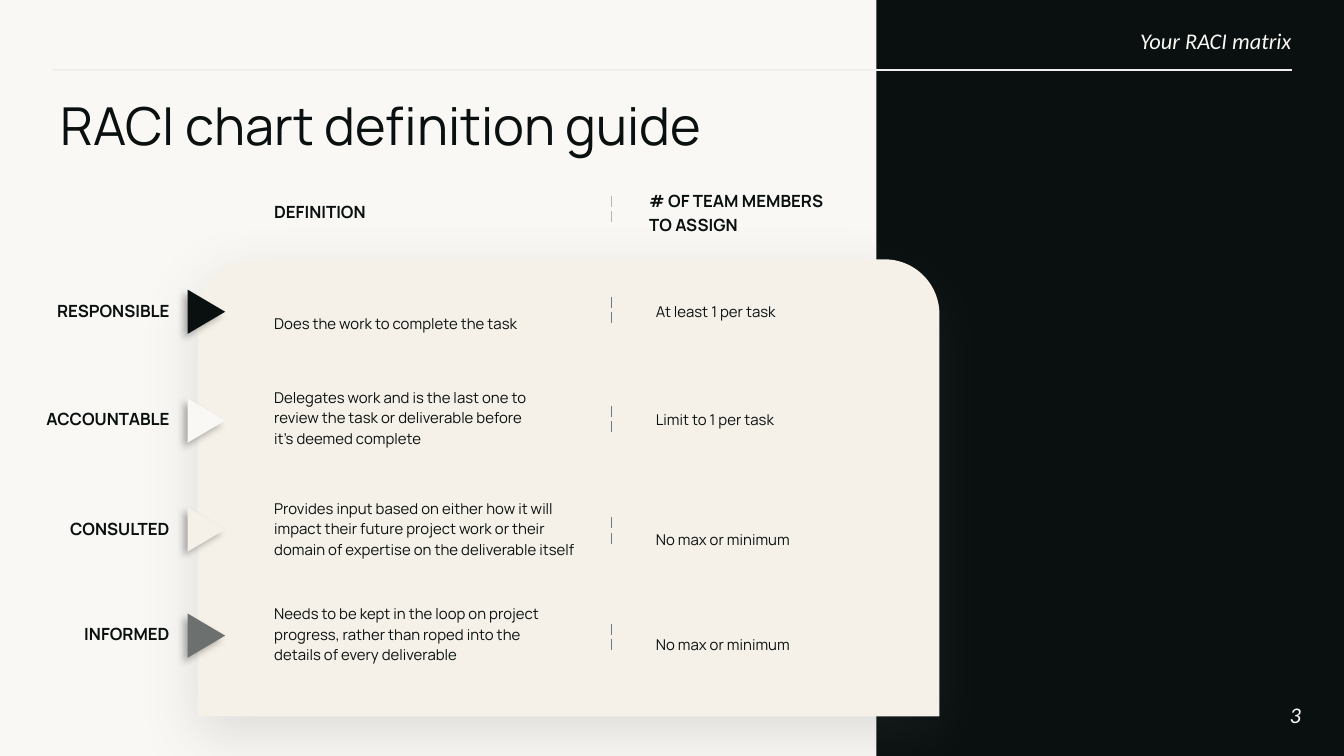
from lxml.etree import SubElement as Sub
from pptx import Presentation
from pptx.dml.color import RGBColor
from pptx.enum.dml import MSO_LINE as Dash
from pptx.enum.shapes import MSO_CONNECTOR as Link, MSO_SHAPE as Form
from pptx.enum.text import MSO_ANCHOR as Anchor, MSO_AUTO_SIZE as Auto, PP_ALIGN as Align
from pptx.oxml.ns import qn
from pptx.util import Inches, Pt

INK = RGBColor(0x09, 0x10, 0x0F)
PAPER = RGBColor(0xF9, 0xF8, 0xF5)
CREAM = RGBColor(0xF5, 0xF1, 0xE8)
GREY = RGBColor(0x6C, 0x70, 0x6F)
RULE = RGBColor(0xEF, 0xEF, 0xEF)
SLATE = RGBColor(0x67, 0x7E, 0x87)
SILVER = RGBColor(0xB5, 0xB7, 0xB7)

TITLE = {"name": "Manrope", "size": Pt(28)}
HEAD = {"name": "Manrope", "size": Pt(9), "bold": True}
BODY = {"name": "Manrope", "size": Pt(8)}
NOTE = {"name": "Calibri", "size": Pt(12), "italic": True}
PAD = {"margin_left": 0.07, "margin_right": 0.07, "margin_top": 0.04, "margin_bottom": 0.04}

SOFT = ("595959", 17, 30, 10, 90)
HARD = ("000000", 30, 4, 3, 135)

ROWS = [
    {"top": 0.28, "label": ("RESPONSIBLE", 0.27, 1.09), "mark": (0.25, INK),
     "role": ("Does the work to complete the task", 0.28, 2, 0.37),
     "count": ("At least 1 per task", 0.28, 0.21, None)},
    {"top": 1.09, "label": ("ACCOUNTABLE", 1.07, 1.22), "mark": (1.06, PAPER),
     "role": ("Delegates work and is the last one to review the task or deliverable "
              "before it’s deemed complete", 0.91, 2.13, 0.52),
     "count": ("Limit to 1 per task", 1.09, 0.21, None)},
    {"top": 1.92, "label": ("CONSULTED", 1.89, 1), "mark": (1.87, CREAM),
     "role": ("Provides input based on either how it will impact their future project work "
              "or their domain of expertise on the deliverable itself", 1.66, 2.47, 0.67),
     "count": ("No max or minimum", 1.83, 0.43, 1.6)},
    {"top": 2.71, "label": ("INFORMED", 2.67, 0.89), "mark": (2.66, GREY),
     "role": ("Needs to be kept in the loop on project progress, rather than roped into "
              "the details of every deliverable", 2.52, 2.19, 0.52),
     "count": ("No max or minimum", 2.61, 0.43, 1.6)},
]


def add_text(slide, box, text, style, color=INK, align=Align.LEFT,
             anchor=Anchor.TOP, space=None, pad=True):
    frame = slide.shapes.add_textbox(*map(Inches, box)).text_frame
    for key, gap in PAD.items():
        setattr(frame, key, Inches(gap if pad else 0))
    frame.word_wrap = True
    frame.auto_size = Auto.SHAPE_TO_FIT_TEXT if pad else Auto.NONE
    frame.vertical_anchor = anchor
    para = frame.paragraphs[0]
    para.alignment = align
    if space:
        para.line_spacing = space
    run = para.add_run()
    run.text = text
    for key, val in style.items():
        setattr(run.font, key, val)
    run.font.color.rgb = color


def add_form(slide, kind, box, color, shade=None):
    form = slide.shapes.add_shape(kind, *map(Inches, box))
    form.fill.solid()
    form.fill.fore_color.rgb = color
    form.line.fill.background()
    form.shadow.inherit = False
    if shade:
        tint, alpha, blur, dist, turn = shade
        effect = form._element.spPr.find(qn("a:effectLst"))
        outer = Sub(effect, qn("a:outerShdw"), blurRad=str(Pt(blur)), dist=str(Pt(dist)),
                    dir=str(turn * 60000), algn="ctr", rotWithShape="0")
        hue = Sub(outer, qn("a:srgbClr"), val=tint)
        Sub(hue, qn("a:alpha"), val=str(alpha * 1000))
    return form


def add_line(slide, ends, color, dash=None):
    line = slide.shapes.add_connector(Link.STRAIGHT, *map(Inches, ends))
    line.line.color.rgb = color
    line.line.width = Pt(0.75)
    if dash:
        line.line.dash_style = dash
    Sub(line._element.spPr, qn("a:effectLst"))


def add_tick(slide, x, y, color):
    add_line(slide, (x, y, x, y + 0.21), color, Dash.LONG_DASH)


def draw_frame(slide, box):
    x, y, w, h = box
    add_form(slide, Form.RECTANGLE, (x + 6.52, y - 0.02, 3.49, h + 0.05), INK)
    add_line(slide, (x + w - 0.39, y + 0.52, x + 0.39, y + 0.52), RULE)
    add_text(slide, (x + 5.76, y + 0.2, 3.85, 0.18), "Your RACI matrix", NOTE,
             PAPER, Align.RIGHT, pad=False)
    add_text(slide, (x + 9.08, y + 5.1, 0.6, 0.43), "3", NOTE,
             PAPER, Align.RIGHT, Anchor.MIDDLE, pad=False)
    add_text(slide, (x + 0.45, y + 0.69, 5.58, 0.51), "RACI chart definition guide",
             TITLE, pad=False)


def draw_heads(slide, box):
    x, y, w, h = box
    add_text(slide, (x, y + 0.1, 0.96, 0.23), "DEFINITION", HEAD)
    add_text(slide, (x + w - 1.58, y, 1.58, h), "# OF TEAM MEMBERS TO ASSIGN", HEAD, space=1.15)
    add_tick(slide, x + 2.58, y + 0.1, SILVER)


def draw_row(slide, box, row):
    x, y = box[:2]
    text, top, wide, high = row["role"]
    add_text(slide, (x + 0.5, y + top, wide, high), text, BODY,
             anchor=Anchor.MIDDLE, space=1.15)
    text, top, high, space = row["count"]
    add_text(slide, (x + 3.34, y + top, 1.2, high), text, BODY,
             anchor=Anchor.MIDDLE, space=space)
    add_tick(slide, x + 3.08, y + row["top"], SLATE)
    text, top, wide = row["label"]
    add_text(slide, (x - 0.14 - wide, y + top, wide, 0.23), text, HEAD, align=Align.RIGHT)
    top, color = row["mark"]
    mark = add_form(slide, Form.ISOSCELES_TRIANGLE, (x - 0.1, y + top, 0.33, 0.28), color, HARD)
    mark.rotation = 90


def draw_panel(slide, box):
    panel = add_form(slide, Form.ROUND_2_SAME_RECTANGLE, box, CREAM, SOFT)
    panel.adjustments[0] = 0.12
    panel.adjustments[1] = 0
    for row in ROWS:
        draw_row(slide, box, row)


def main():
    deck = Presentation()
    deck.slide_width = Inches(10)
    deck.slide_height = deck.slide_width * 9 // 16
    slide = deck.slides.add_slide(deck.slide_layouts[6])
    slide.background.fill.solid()
    slide.background.fill.fore_color.rgb = PAPER
    draw_frame(slide, (0, 0, 10, 5.62))
    draw_panel(slide, (1.47, 1.93, 5.52, 3.4))
    draw_heads(slide, (1.97, 1.36, 4.37, 0.4))
    deck.save("out.pptx")


if __name__ == "__main__":
    main()
